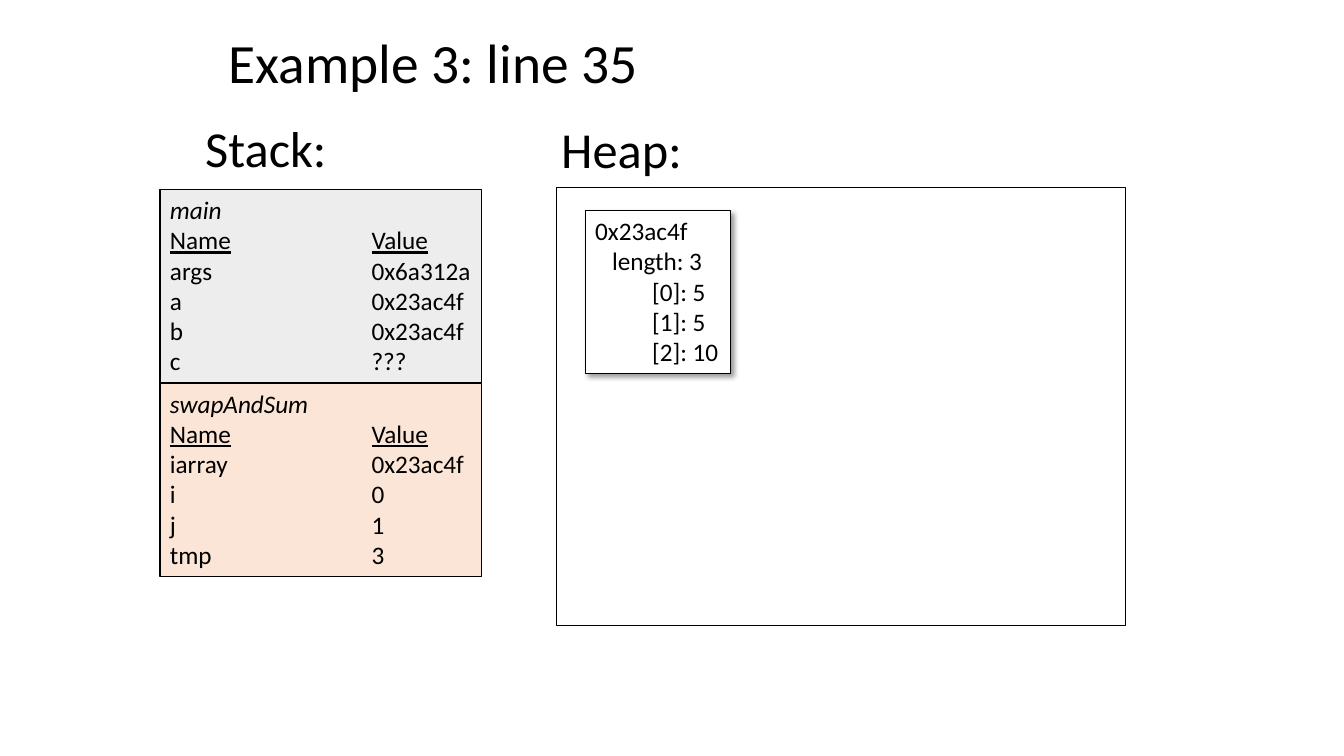
from dataclasses import dataclass

from lxml.etree import SubElement
from pptx import Presentation
from pptx.dml.color import RGBColor as Rgb
from pptx.enum.shapes import MSO_SHAPE as Kind
from pptx.enum.text import MSO_ANCHOR as Anchor, MSO_AUTO_SIZE as Fit, PP_ALIGN as Align
from pptx.oxml.ns import qn
from pptx.shapes.autoshape import Shape
from pptx.slide import Slide
from pptx.text.text import TextFrame, _Paragraph as Para
from pptx.util import Pt


@dataclass(frozen=True)
class Theme:
    font: str = "Calibri"
    ink: str = "000000"
    white: str = "FFFFFF"
    gray: str = "EDEDED"
    peach: str = "FBE5D6"
    title: float = 39.6
    head: float = 36
    body: float = 18
    line: float = 0.75


@dataclass(frozen=True)
class Box:
    left: float
    top: float
    width: float
    height: float


@dataclass(frozen=True)
class Frame:
    name: str
    fill: str
    rows: list[tuple[str, str]]


@dataclass(frozen=True)
class Label:
    text: str
    box: Box


@dataclass(frozen=True)
class Field:
    text: str
    indent: float


THEME = Theme()
TITLE = Box(156.2, 21.6, 648, 50.4)
STACK = Box(114.3, 135.4, 229.7, 138.2)
HEAP = Box(397.4, 134, 406.7, 312.6)
ARRAY = Box(418, 150.3, 104, 116.5)
VALUE_TAB = 144

LABELS = [
    Label("Stack:", Box(139.5, 80, 101, 51)),
    Label("Heap:", Box(393.8, 80.7, 101, 51)),
]
FRAMES = [
    Frame("main", THEME.gray, [
        ("args", "0x6a312a"), ("a", "0x23ac4f"), ("b", "0x23ac4f"), ("c", "???"),
    ]),
    Frame("swapAndSum", THEME.peach, [
        ("iarray", "0x23ac4f"), ("i", "0"), ("j", "1"), ("tmp", "3"),
    ]),
]
FIELDS = [
    Field("0x23ac4f", 0),
    Field("length: 3", 12.2),
    Field("[0]: 5", 40.7),
    Field("[1]: 5", 40.7),
    Field("[2]: 10", 40.7),
]


def place(box: Box) -> tuple[Pt, Pt, Pt, Pt]:
    return Pt(box.left), Pt(box.top), Pt(box.width), Pt(box.height)


def style(text: TextFrame, size: float) -> None:
    for para in text.paragraphs:
        para.alignment = Align.LEFT
        for run in para.runs:
            run.font.name = THEME.font
            run.font.size = Pt(size)
            run.font.color.rgb = Rgb.from_string(THEME.ink)


def add_rect(slide: Slide, box: Box, fill: str | None = None) -> Shape:
    rect = slide.shapes.add_shape(Kind.RECTANGLE, *place(box))
    rect.shadow.inherit = False
    if fill:
        rect.fill.solid()
        rect.fill.fore_color.rgb = Rgb.from_string(fill)
    else:
        rect.fill.background()
    rect.line.color.rgb = Rgb.from_string(THEME.ink)
    rect.line.width = Pt(THEME.line)
    rect.text_frame.vertical_anchor = Anchor.TOP
    return rect


def add_shadow(rect: Shape) -> None:
    effects = rect._element.spPr.find(qn("a:effectLst"))
    outer = SubElement(effects, qn("a:outerShdw"), blurRad=str(Pt(4)), dist=str(Pt(3)),
                       dir=str(45 * 60000), algn="tl", rotWithShape="0")
    color = SubElement(outer, qn("a:srgbClr"), val=THEME.ink)
    SubElement(color, qn("a:alpha"), val="40000")


def add_tab(para: Para) -> None:
    tabs = SubElement(para._p.get_or_add_pPr(), qn("a:tabLst"))
    SubElement(tabs, qn("a:tab"), pos=str(Pt(VALUE_TAB)), algn="l")


def add_title(slide: Slide) -> None:
    title = slide.shapes.title
    title.left, title.top, title.width, title.height = place(TITLE)
    text = title.text_frame
    text.text = "Example 3: line 35"
    text.auto_size = Fit.NONE
    text.vertical_anchor = Anchor.MIDDLE
    text.paragraphs[0].line_spacing = 0.9
    style(text, THEME.title)


def add_label(slide: Slide, label: Label) -> None:
    text = slide.shapes.add_textbox(*place(label.box)).text_frame
    text.word_wrap = True
    text.auto_size = Fit.SHAPE_TO_FIT_TEXT
    text.text = label.text
    style(text, THEME.head)


def add_frame(slide: Slide, frame: Frame, box: Box) -> None:
    text = add_rect(slide, box, frame.fill).text_frame
    text.word_wrap = True
    text.auto_size = Fit.SHAPE_TO_FIT_TEXT
    text.text = frame.name
    text.paragraphs[0].runs[0].font.italic = True

    # Underlined column heads with a plain gap
    head = text.add_paragraph()
    add_tab(head)
    for part in ("Name", "\t", "Value"):
        run = head.add_run()
        run.text = part
        run.font.underline = part != "\t"

    # Variables
    for name, value in frame.rows:
        para = text.add_paragraph()
        para.text = f"{name}\t{value}"
        add_tab(para)
    style(text, THEME.body)


def add_array(slide: Slide) -> None:
    rect = add_rect(slide, ARRAY, THEME.white)
    add_shadow(rect)
    text = rect.text_frame
    text.word_wrap = False
    text.auto_size = Fit.SHAPE_TO_FIT_TEXT
    text.text = "\n".join(field.text for field in FIELDS)
    for para, field in zip(text.paragraphs, FIELDS):
        para._p.get_or_add_pPr().set("marL", str(Pt(field.indent)))
    style(text, THEME.body)


def main() -> None:
    deck = Presentation()
    deck.slide_width, deck.slide_height = Pt(960), Pt(540)
    slide = deck.slides.add_slide(deck.slide_layouts[5])

    # Headings
    add_title(slide)
    for label in LABELS:
        add_label(slide, label)

    # Stack frames, one below the other
    for row, frame in enumerate(FRAMES):
        top = STACK.top + row * STACK.height
        add_frame(slide, frame, Box(STACK.left, top, STACK.width, STACK.height))

    # Heap with its array
    add_rect(slide, HEAP)
    add_array(slide)

    deck.save("out.pptx")


if __name__ == "__main__":
    main()
